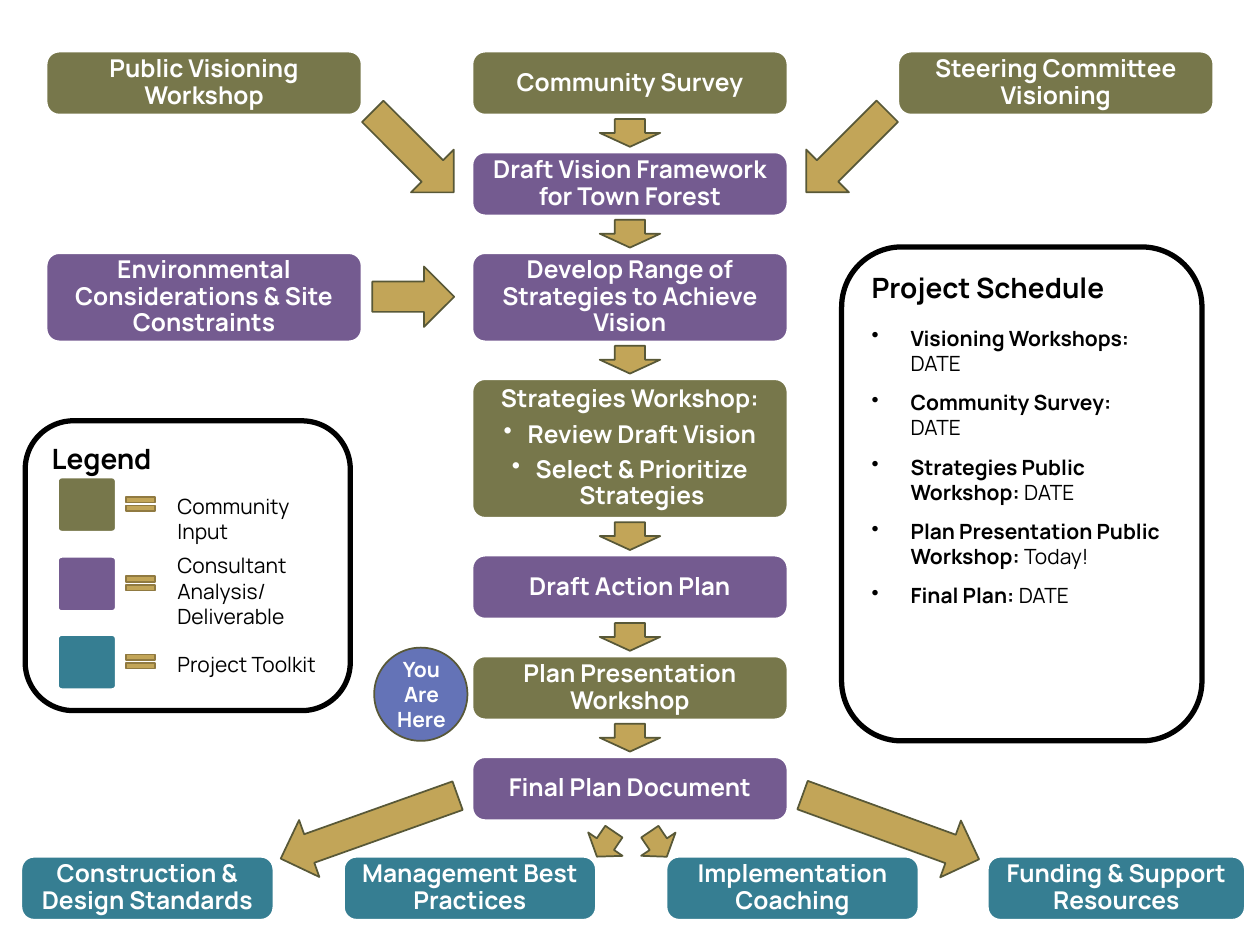
import pptx
import pptx.util
import pptx.dml.color
import pptx.enum.shapes
import pptx.enum.text
import lxml.etree

Pt = pptx.util.Pt
KIND = pptx.enum.shapes.MSO_SHAPE
MID = pptx.enum.text.PP_ALIGN.CENTER
OLIVE, PLUM, TEAL, GOLD = "77774B", "745B90", "367E92", "C2A558"
WHITE, BLACK, EDGE = "FFFFFF", "000000", "585837"

deck = pptx.Presentation()
deck.slide_width = pptx.util.Inches(10)
deck.slide_height = pptx.util.Inches(7.5)
unit = deck.slide_width / 100  # the slide is a grid of 100 columns by 75 rows
slide = deck.slides.add_slide(deck.slide_layouts[6])
tone = pptx.dml.color.RGBColor.from_string


def draw(home, kind, box, fill, line, wide=1, turn=0):
    """Add a shape to home; box is left, top, width, height in grid units."""
    item = home.add_shape(kind, *[round(n * unit) for n in box])
    item.shadow.inherit = False
    item.rotation = turn
    if fill:
        item.fill.solid()
        item.fill.fore_color.rgb = tone(fill)
    else:
        item.fill.background()
    item.line.color.rgb = tone(line)
    item.line.width = Pt(wide)
    if kind == KIND.ROUNDED_RECTANGLE and fill:
        item.adjustments[0] = 1 / min(box[2:]) if box[2] > 10 else 0.07
    return item


def style(par, size, color, bold, align=None, dot=0):
    """Format a paragraph and its runs; dot is the bullet indent in grid units."""
    if dot:
        prop = par._p.get_or_add_pPr()
        prop.set("marL", str(round(dot * unit)))
        prop.set("indent", str(-round(dot * unit)))
        name = "{http://schemas.openxmlformats.org/drawingml/2006/main}buChar"
        lxml.etree.SubElement(prop, name).set("char", "•")
    par.alignment = align or pptx.enum.text.PP_ALIGN.LEFT
    for run in par.runs:
        run.font.name = "Manrope"
        run.font.size = Pt(size)
        run.font.bold = bold
        run.font.color.rgb = tone(color)


# Boxes of the flow: text, colour, place
cards = [
    ("Public Visioning Workshop", OLIVE, (3.7, 4.1, 25, 5)),
    ("Steering Committee Visioning", OLIVE, (71.3, 4.1, 25, 5)),
    ("Environmental Considerations & Site Constraints", PLUM, (3.7, 20.1, 25, 7)),
    ("Construction & Design Standards", TEAL, (1.7, 68, 20, 5)),
    ("Management Best Practices", TEAL, (27.3, 68, 20, 5)),
    ("Implementation Coaching", TEAL, (52.9, 68, 20, 5)),
    ("Funding & Support Resources", TEAL, (78.4, 68, 20.4, 5)),
]
steps = [
    ("Community Survey", OLIVE, 5),
    ("Draft Vision Framework for Town Forest", PLUM, 5),
    ("Develop Range of Strategies to Achieve Vision", PLUM, 7),
    ("Strategies Workshop:\nReview Draft Vision\nSelect & Prioritize Strategies", OLIVE, 11),
    ("Draft Action Plan", PLUM, 5),
    ("Plan Presentation Workshop", OLIVE, 5),
    ("Final Plan Document", PLUM, 5),
]
arrows = [
    ((46.4, 65.8, 3.3, 2.4), 34.2),
    ((50.6, 65.8, 3.3, 2.4), 326),
    ((30.4, 7.5, 4.8, 9.1), 315),
    ((64.8, 7.5, 4.8, 9.1), 45),
    ((30.4, 20.3, 4.8, 6.5), 270),
    ((26.9, 58.2, 4.8, 14.9), 70.4),
    ((68.3, 58.2, 4.8, 14.9), 290),
]
gap = 3
top = 4.1
for text, fill, high in steps:
    cards.append((text, fill, (37.5, top, 25, high)))
    if top > 4.1:
        arrows.append(((47.6, top - gap + 0.35, 4.8, 2.2), 0))
    top += high + gap

for text, fill, box in cards:
    card = draw(slide.shapes, KIND.ROUNDED_RECTANGLE, box, fill, WHITE)
    frame = card.text_frame
    frame.margin_left = frame.margin_right = round(1.1 * unit)
    frame.margin_top = frame.margin_bottom = round(1.1 * unit)
    frame.text = text
    for spot, par in enumerate(frame.paragraphs):
        par.line_spacing = 0.9
        par.space_after = Pt(5)
        style(par, 14, WHITE, True, MID, 1.9 if spot else 0)

for box, turn in arrows:
    draw(slide.shapes, KIND.DOWN_ARROW, box, GOLD, EDGE, turn=turn)

# Schedule
plan = draw(slide.shapes, KIND.ROUNDED_RECTANGLE, (66.8, 19.6, 28.6, 39.2), None, BLACK, 3)
frame = plan.text_frame
frame.vertical_anchor = pptx.enum.text.MSO_ANCHOR.TOP
frame.text = "Project Schedule"
frame.paragraphs[0].space_after = Pt(12)
style(frame.paragraphs[0], 16, BLACK, True)
dates = [
    ("Visioning Workshops: ", "DATE"),
    ("Community Survey: \v", "DATE"),
    ("Strategies Public Workshop: ", "DATE"),
    ("Plan Presentation Public Workshop: ", "Today!"),
    ("Final Plan: ", "DATE"),
]
for event, date in dates:
    par = frame.add_paragraph()
    par.text = event
    par.add_run().text = date
    par.space_after = Pt(8)
    style(par, 12, BLACK, True, dot=3.1)
    par.runs[-1].font.bold = False

# Legend
group = slide.shapes.add_group_shape().shapes
key = draw(group, KIND.ROUNDED_RECTANGLE, (2, 33.4, 25.8, 23), None, BLACK, 3)
key.text_frame.vertical_anchor = pptx.enum.text.MSO_ANCHOR.TOP
key.text_frame.text = "Legend"
style(key.text_frame.paragraphs[0], 16, BLACK, True)
draw(slide.shapes, KIND.OVAL, (29.7, 51.4, 7.4, 7.4), "6473B7", EDGE)

notes = [(slide.shapes, "You Are Here", (30.2, 51.6, 6.5, 7.1), WHITE, True, MID)]
marks = [
    ("Community Input", OLIVE, 37.9, 38.7, 14.8, 2.6),
    ("Consultant \vAnalysis/ Deliverable", PLUM, 44.2, 43.4, 17, 4.4),
    ("Project Toolkit", TEAL, 50.4, 51.2, 14.8, 2.6),
]
for text, fill, top, head, wide, high in marks:
    draw(group, KIND.ROUNDED_RECTANGLE, (4.6, top, 4.6, 4.3), fill, WHITE)
    draw(group, KIND.MATH_EQUAL, (9.6, top + 1.15, 3.1, 1.9), GOLD, "907A41")
    notes.append((group, text, (13.1, head, wide, high), BLACK, False, None))

for home, text, box, color, bold, align in notes:
    note = home.add_textbox(*[round(n * unit) for n in box])
    note.text_frame.word_wrap = True
    par = note.text_frame.paragraphs[0]
    par.text = text
    style(par, 12, color, bold, align)

deck.save("out.pptx")
